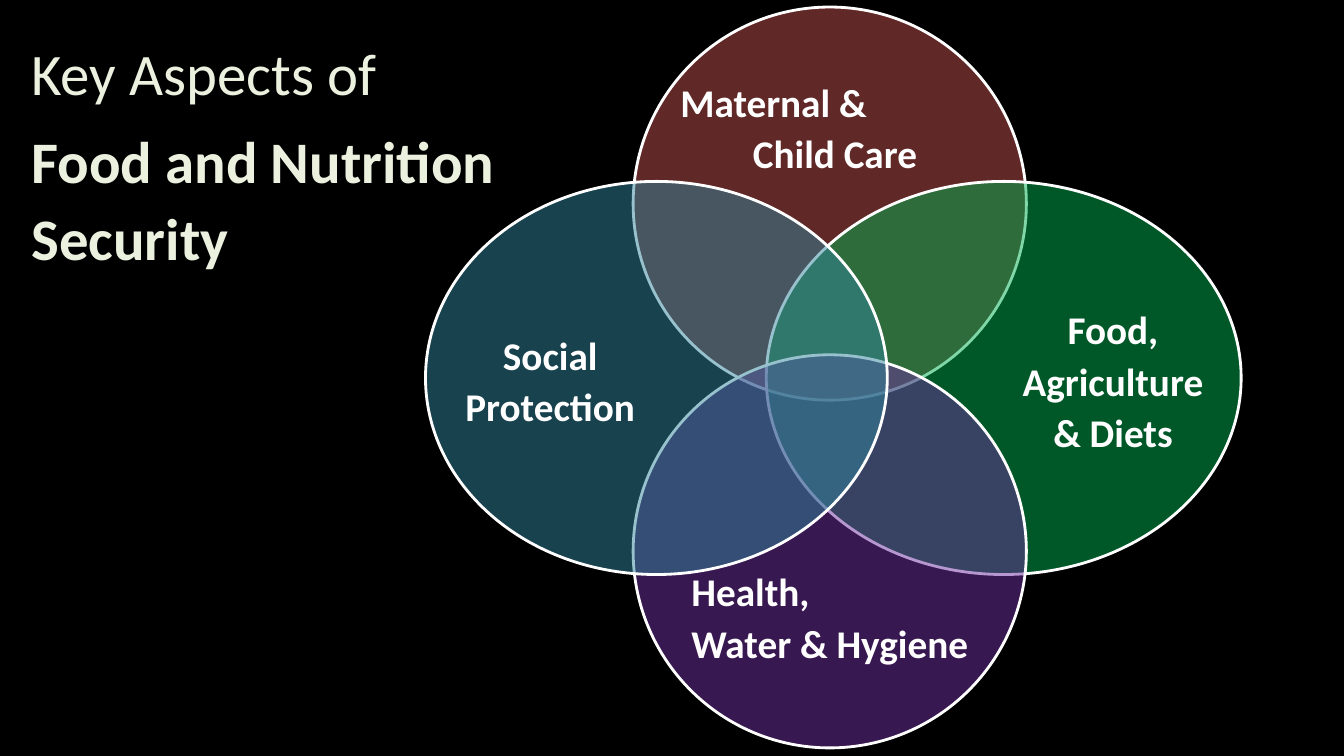
from lxml.etree import SubElement
from pptx import Presentation
from pptx.dml.color import RGBColor
from pptx.enum.shapes import MSO_SHAPE
from pptx.enum.text import MSO_ANCHOR, PP_ALIGN
from pptx.oxml.ns import qn
from pptx.util import Inches, Pt

COLORS = {
    "background": "000000",
    "title": "EBF1DE",
    "white": "FFFFFF",
    "care": "C0504D",
    "food": "00B050",
    "health": "7030A0",
    "social": "31859C",
}
FONT = "Calibri"

# Circle box, colour, label, label area as shares of the box, first-line and later indents
CIRCLES = [
    ((6.28, 0.07, 3.9, 3.9), "care", "Maternal &\vChild Care",
     (0.12, 0.14, 0.77, 0.32), (0, 0.72)),
    ((7.6, 1.8, 4.71, 3.9), "food", "Food, Agriculture & Diets",
     (0.53, 0.12, 0.4, 0.76), None),
    ((6.28, 3.52, 3.9, 3.9), "health", "Health,\vWater & Hygiene",
     (0.12, 0.5, 0.77, 0.32), (0.11, 0.11)),
    ((4.22, 1.8, 4.58, 3.9), "social", "Social Protection",
     (0.08, 0.12, 0.38, 0.76), None),
]


def rgb(name):
    return RGBColor.from_string(COLORS[name])


def style(paragraph, size, color, bold, spacing):
    paragraph.line_spacing = spacing
    for run in paragraph.runs:
        run.font.name = FONT
        run.font.size = Pt(size)
        run.font.bold = bold
        run.font.color.rgb = rgb(color)


def add_frame(slide, box, margins):
    frame = slide.shapes.add_textbox(*map(Inches, box)).text_frame
    frame.word_wrap = True
    frame.vertical_anchor = MSO_ANCHOR.MIDDLE
    frame.margin_left = frame.margin_right = Inches(margins[0])
    frame.margin_top = frame.margin_bottom = Inches(margins[1])
    return frame


def add_title(slide, box):
    frame = add_frame(slide, box, (0.07, 0.04))
    frame.text = "Key Aspects of\nFood and Nutrition\nSecurity"
    looks = [(False, 1.25), (True, 1.25), (True, 1.1)]
    for paragraph, (bold, spacing) in zip(frame.paragraphs, looks):
        style(paragraph, 42, "title", bold, spacing)


def add_circle(slide, box, color, label, area, indents):
    # Half-transparent ellipse
    ellipse = slide.shapes.add_shape(MSO_SHAPE.OVAL, *map(Inches, box))
    ellipse.shadow.inherit = False
    ellipse.fill.solid()
    ellipse.fill.fore_color.rgb = rgb(color)
    tint = ellipse.fill._xPr.find(qn("a:solidFill"))[0]
    SubElement(tint, qn("a:alpha"), val="50000")
    ellipse.line.color.rgb = rgb("white")
    ellipse.line.width = Pt(2)

    # Label in the part that no other circle covers
    left, top, width, height = box
    x, y, w, h = area
    frame = add_frame(
        slide, (left + x * width, top + y * height, w * width, h * height), (0, 0))
    frame.text = label
    paragraph = frame.paragraphs[0]
    paragraph.alignment = PP_ALIGN.LEFT if indents else PP_ALIGN.CENTER
    if indents:
        first, later = indents
        properties = paragraph._p.get_or_add_pPr()
        properties.set("marL", str(Inches(later)))
        properties.set("indent", str(Inches(first - later)))
    style(paragraph, 28, "white", True, 1.1)


def main():
    deck = Presentation()
    deck.slide_width, deck.slide_height = Inches(13.33), Inches(7.5)
    slide = deck.slides.add_slide(deck.slide_layouts[6])
    slide.background.fill.solid()
    slide.background.fill.fore_color.rgb = rgb("background")

    # Overlapping circles, back to front
    for circle in CIRCLES:
        add_circle(slide, *circle)

    # Title at the top left
    add_title(slide, (0.24, 0, 5.22, 2.89))
    deck.save("out.pptx")


if __name__ == "__main__":
    main()
